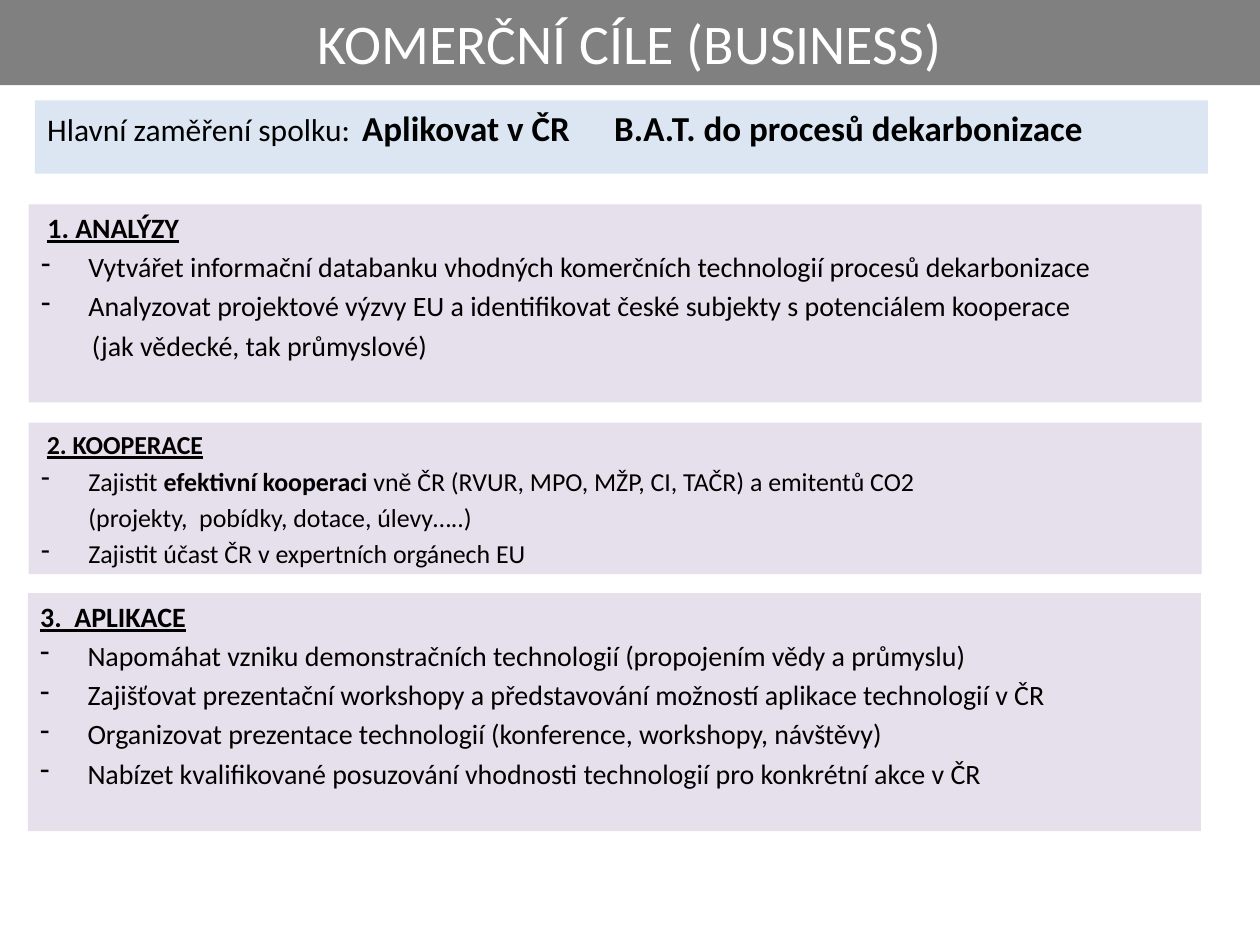
from lxml.etree import SubElement
from pptx import Presentation
from pptx.dml.color import RGBColor
from pptx.enum.text import MSO_ANCHOR, MSO_AUTO_SIZE, PP_ALIGN
from pptx.oxml.ns import qn
from pptx.util import Pt

GREY = RGBColor(0x80, 0x80, 0x80)
BLUE = RGBColor(0xDC, 0xE6, 0xF2)
LILAC = RGBColor(0xE6, 0xE0, 0xEC)
BLACK = RGBColor(0, 0, 0)
WHITE = RGBColor(0xFF, 0xFF, 0xFF)
FONT = "Calibri"
BOX_WIDTH = 670.3
HANGING = 27

TITLE = "KOMERČNÍ CÍLE (BUSINESS)"
PLAIN, BOLD = {}, {"bold": True}
HEADING = {"bold": True, "underline": True}

# A line is (left indent, dashed, [(text, format), ...])
FOCUS = [(0, False, [("Hlavní zaměření spolku:", {"size": Pt(18)}),
                     ("\tAplikovat v ČR\tB.A.T. do procesů dekarbonizace", BOLD)])]
FOCUS_TABS = (185, 318)


def heading(text, indent):
    return indent, False, [(text, HEADING)]


def dash(*runs):
    return HANGING, True, [run if isinstance(run, tuple) else (run, PLAIN) for run in runs]


def continuation(text, indent):
    return indent, False, [(text, PLAIN)]


ANALYSES = [
    heading("1. ANALÝZY", 3.6),
    dash("Vytvářet informační databanku vhodných komerčních technologií procesů dekarbonizace"),
    dash("Analyzovat projektové výzvy EU a identifikovat české subjekty s potenciálem kooperace"),
    continuation("(jak vědecké, tak průmyslové)", 29),
]
COOPERATION = [
    heading("2. KOOPERACE", 3.3),
    dash("Zajistit ", ("efektivní kooperaci ", BOLD),
         "vně ČR (RVUR, MPO, MŽP, CI, TAČR) a emitentů CO2"),
    continuation("(projekty,  pobídky, dotace, úlevy…..)", HANGING),
    dash("Zajistit účast ČR v expertních orgánech EU"),
]
APPLICATION = [
    heading("3.  APLIKACE", 0),
    dash("Napomáhat vzniku demonstračních technologií (propojením vědy a průmyslu)"),
    dash("Zajišťovat prezentační workshopy a představování možností aplikace technologií v ČR"),
    dash("Organizovat prezentace technologií (konference, workshopy, návštěvy)"),
    dash("Nabízet kvalifikované posuzování vhodnosti technologií pro konkrétní akce v ČR"),
]

# left, top, height, fill, text size, lines, tab stops
BOXES = [
    (19.9, 57.4, 41.8, BLUE, 20, FOCUS, FOCUS_TABS),
    (16.4, 116.8, 113.2, LILAC, 16, ANALYSES, ()),
    (16.4, 241.6, 86.5, LILAC, 14.8, COOPERATION, ()),
    (15.9, 338.9, 136.1, LILAC, 16, APPLICATION, ()),
]


def fill_solid(part, color):
    part.fill.solid()
    part.fill.fore_color.rgb = color


def add_run(paragraph, text, color, **formats):
    run = paragraph.add_run()
    run.text = text
    run.font.color.rgb = color
    for name, value in {"name": FONT, **formats}.items():
        setattr(run.font, name, value)


def set_indent(paragraph, indent, dashed, tabs):
    """Set left margin, hanging dash and tab stops, which need XML."""
    properties = paragraph._p.get_or_add_pPr()
    properties.set("marL", str(Pt(indent)))
    properties.set("indent", str(Pt(-indent if dashed else 0)))
    if dashed:
        SubElement(properties, qn("a:buChar"), char="-")
    else:
        SubElement(properties, qn("a:buNone"))
    if tabs:
        stops = SubElement(properties, qn("a:tabLst"))
        for position in tabs:
            SubElement(stops, qn("a:tab"), pos=str(Pt(position)), algn="l")


def add_title(slide):
    title = slide.shapes.title
    title.left, title.top, title.width, title.height = Pt(0), Pt(0), Pt(720), Pt(48.7)
    fill_solid(title, GREY)
    frame = title.text_frame
    frame.auto_size = MSO_AUTO_SIZE.NONE
    frame.vertical_anchor = MSO_ANCHOR.MIDDLE
    frame.paragraphs[0].alignment = PP_ALIGN.CENTER
    add_run(frame.paragraphs[0], TITLE, WHITE, size=Pt(32))


def add_box(slide, left, top, height, color, size, lines, tabs):
    box = slide.shapes.add_textbox(Pt(left), Pt(top), Pt(BOX_WIDTH), Pt(height))
    fill_solid(box, color)
    frame = box.text_frame
    frame.word_wrap = True
    for number, (indent, dashed, runs) in enumerate(lines):
        paragraph = frame.add_paragraph() if number else frame.paragraphs[0]
        paragraph.space_before = Pt(size * 0.2)
        set_indent(paragraph, indent, dashed, tabs)
        for text, formats in runs:
            add_run(paragraph, text, BLACK, **{"size": Pt(size), **formats})


def main():
    deck = Presentation()
    deck.slide_width, deck.slide_height = Pt(720), Pt(540)
    slide = deck.slides.add_slide(deck.slide_layouts[5])
    add_title(slide)
    for box in BOXES:
        add_box(slide, *box)
    deck.save("out.pptx")


if __name__ == "__main__":
    main()
